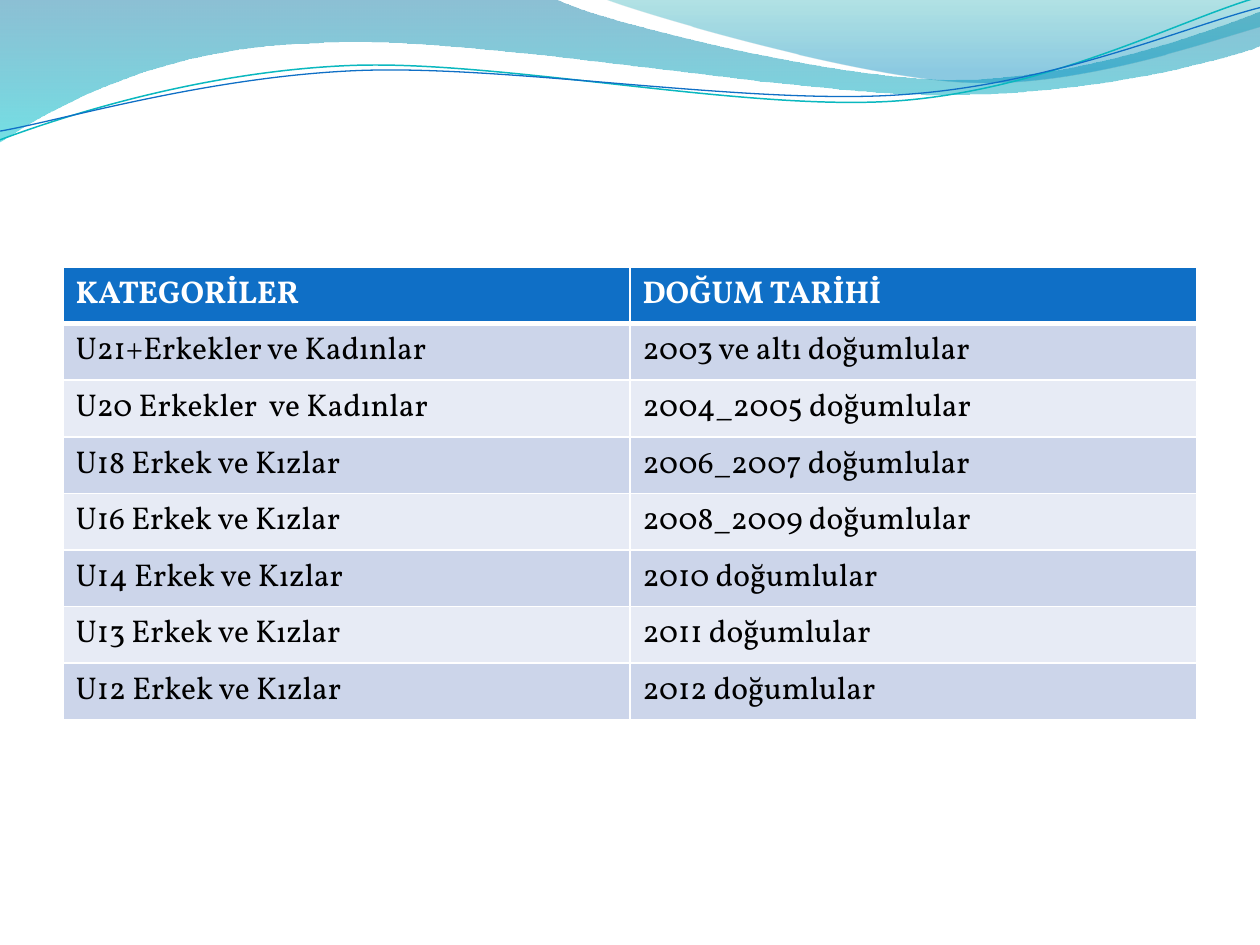
"""Builds the slide of age categories and birth years under a wave banner."""
from math import cos, radians, sin

from lxml.etree import SubElement
from pptx import Presentation
from pptx.dml.color import RGBColor
from pptx.oxml.ns import qn
from pptx.util import Emu, Inches, Pt

COLUMNS, ROWS = 10, 7.5
CATEGORIES = [
    ("KATEGORİLER", "DOĞUM TARİHİ"),
    ("U21+Erkekler ve Kadınlar", "2003 ve altı doğumlular"),
    ("U20 Erkekler  ve Kadınlar", "2004_2005 doğumlular"),
    ("U18 Erkek ve Kızlar", "2006_2007 doğumlular"),
    ("U16 Erkek ve Kızlar", "2008_2009 doğumlular"),
    ("U14 Erkek ve Kızlar", "2010 doğumlular"),
    ("U13 Erkek ve Kızlar", "2011 doğumlular"),
    ("U12 Erkek ve Kızlar", "2012 doğumlular"),
]
WIDE_WAVE = [
    (0, 0), (4.4, -0.01),
    (4.76, 0.17, 6.64, 0.63, 7.58, 0.63), (8.53, 0.63, 9.58, 0.26, 10, 0.09),
    (10.01, 0.36),
    (9.83, 0.44, 8.7, 0.76, 7.46, 0.75), (6.22, 0.75, 3.82, 0.28, 2.57, 0.34),
    (1.29, 0.36, 0.46, 0.83, -0.01, 1.13), (0, 0),
]
RIGHT_WAVE = [
    (4.79, -0.01),
    (5.09, 0.11, 6.82, 0.62, 7.69, 0.65), (8.56, 0.69, 9.61, 0.32, 10, 0.21),
    (10, 0), (4.79, -0.01),
]
TEAL_LINE = [
    (0, 1.11),
    (0.48, 0.93, 1.58, 0.57, 2.77, 0.52), (3.95, 0.47, 5.93, 0.89, 7.13, 0.8),
    (8.33, 0.71, 9.38, 0.15, 9.98, -0.02),
]
BLUE_LINE = [
    (0, 1.04),
    (0.47, 0.96, 1.64, 0.61, 2.83, 0.56), (4.03, 0.51, 5.97, 0.84, 7.17, 0.75),
    (8.36, 0.67, 9.41, 0.21, 10, 0.06),
]


def color(value):
    """Turn a hex string into a colour."""
    return RGBColor.from_string(value)


def write(frame, text, font="Vollkorn", size=18, ink="000000", bold=False):
    """Put one formatted span of text in a frame."""
    span = frame.paragraphs[0].add_run()
    span.text = text
    span.font.name, span.font.size, span.font.bold = font, Pt(size), bold
    span.font.color.rgb = color(ink)


def turn(steps, angle, center):
    """Rotate every point of the steps clockwise around a centre."""
    (left, top), slope = center, radians(angle)
    turned = []
    for step in steps:
        pairs = [(x - left, y - top) for x, y in zip(step[::2], step[1::2])]
        turned.append(tuple(
            value for x, y in pairs
            for value in (left + x * cos(slope) - y * sin(slope),
                          top + x * sin(slope) + y * cos(slope))))
    return turned


class SlideStyle:
    """Holds the palette, the grid and the current slide."""

    accent, paper = "0F6FC6", "FFFFFF"
    bands = "CCD5EA", "E7EBF5"
    tilt = 2.7

    def __init__(self, deck):
        """Add a blank page and measure its grid."""
        self.page = deck.slides.add_slide(deck.slide_layouts[6])
        self.column = deck.slide_width / COLUMNS
        self.row = deck.slide_height / ROWS

    def outline(self, steps, close):
        """Draw a shadowless freeform of lines (2 numbers) and curves (6)."""
        points = [(x * self.column, y * self.row) for step in steps
                  for x, y in zip(step[::2], step[1::2])]
        builder = self.page.shapes.build_freeform(*points[0])
        builder.add_line_segments(points[1:], close=close)
        shape = builder.convert_to_shape()
        shape.shadow.inherit = False
        segments = iter(list(shape._element.iter(qn("a:lnTo"))))
        for step in steps[1:]:
            segment = next(segments)
            if len(step) == 6:
                segment.tag = qn("a:cubicBezTo")
                for _ in range(2):
                    extra = next(segments)
                    segment.append(extra[0])
                    extra.getparent().remove(extra)
        return shape

    def wave(self, steps, stops):
        """Draw a wave with a translucent gradient running downwards."""
        shape = self.outline(steps, True)
        shape.line.fill.background()
        shape.fill.gradient()
        shape.fill.gradient_angle = 270
        for stop, (position, value, _) in zip(shape.fill.gradient_stops, stops):
            stop.position = position
            stop.color.rgb = color(value)
        tints = shape.fill._xPr.iter(qn("a:srgbClr"))
        for tint, (_, _, opacity) in zip(tints, stops):
            SubElement(tint, qn("a:alpha"), val=str(opacity * 1000))

    def curve(self, steps, center, value, width):
        """Draw an open curved line, tilted around its centre."""
        shape = self.outline(turn(steps, self.tilt, center), False)
        shape.rotation = 360 - self.tilt
        shape.fill.background()
        shape.line.color.rgb = color(value)
        shape.line.width = Pt(width)

    def border(self, cell, **widths):
        """Rule the sides of a cell in the paper colour."""
        properties = cell._tc.get_or_add_tcPr()
        for side in "LRTB":
            line = SubElement(properties, qn(f"a:ln{side}"),
                              w=str(Pt(widths.get(side, 1))))
            fill = SubElement(line, qn("a:solidFill"))
            SubElement(fill, qn("a:srgbClr"), val=self.paper)

    def table(self, entries, left, top, width, row_height):
        """Draw a table with a header and banded rows."""
        area = [Emu(round(length)) for length in (
            left * self.column, top * self.row, width * self.column,
            row_height * len(entries) * self.row)]
        grid = self.page.shapes.add_table(len(entries), len(entries[0]), *area).table
        grid.horz_banding = False
        for number, entry in enumerate(entries):
            header = number == 0
            sides = {0: {"B": 3}, 1: {"T": 3}}.get(number, {})
            for cell, text in zip(grid.rows[number].cells, entry):
                self.border(cell, **sides)
                cell.fill.solid()
                cell.fill.fore_color.rgb = color(
                    self.accent if header else self.bands[(number - 1) % 2])
                write(cell.text_frame, text, bold=header,
                      ink=self.paper if header else "000000")


def main():
    """Build and save the deck."""
    deck = Presentation()
    deck.slide_width, deck.slide_height = Inches(COLUMNS), Inches(ROWS)
    style = SlideStyle(deck)
    style.wave(WIDE_WAVE, [(0, "0074A1", 45), (1, "00C6CF", 55)])
    style.wave(RIGHT_WAVE, [(0, "00A1A9", 30), (0.8, "008BBF", 45)])
    style.curve(TEAL_LINE, (4.99, 0.58), "0AB8BF", 0.85)
    style.curve(BLUE_LINE, (4.99, 0.59), style.accent, 0.75)
    style.table(CATEGORIES, left=0.5, top=2.12, width=9, row_height=0.41)
    deck.save("out.pptx")


if __name__ == "__main__":
    main()
